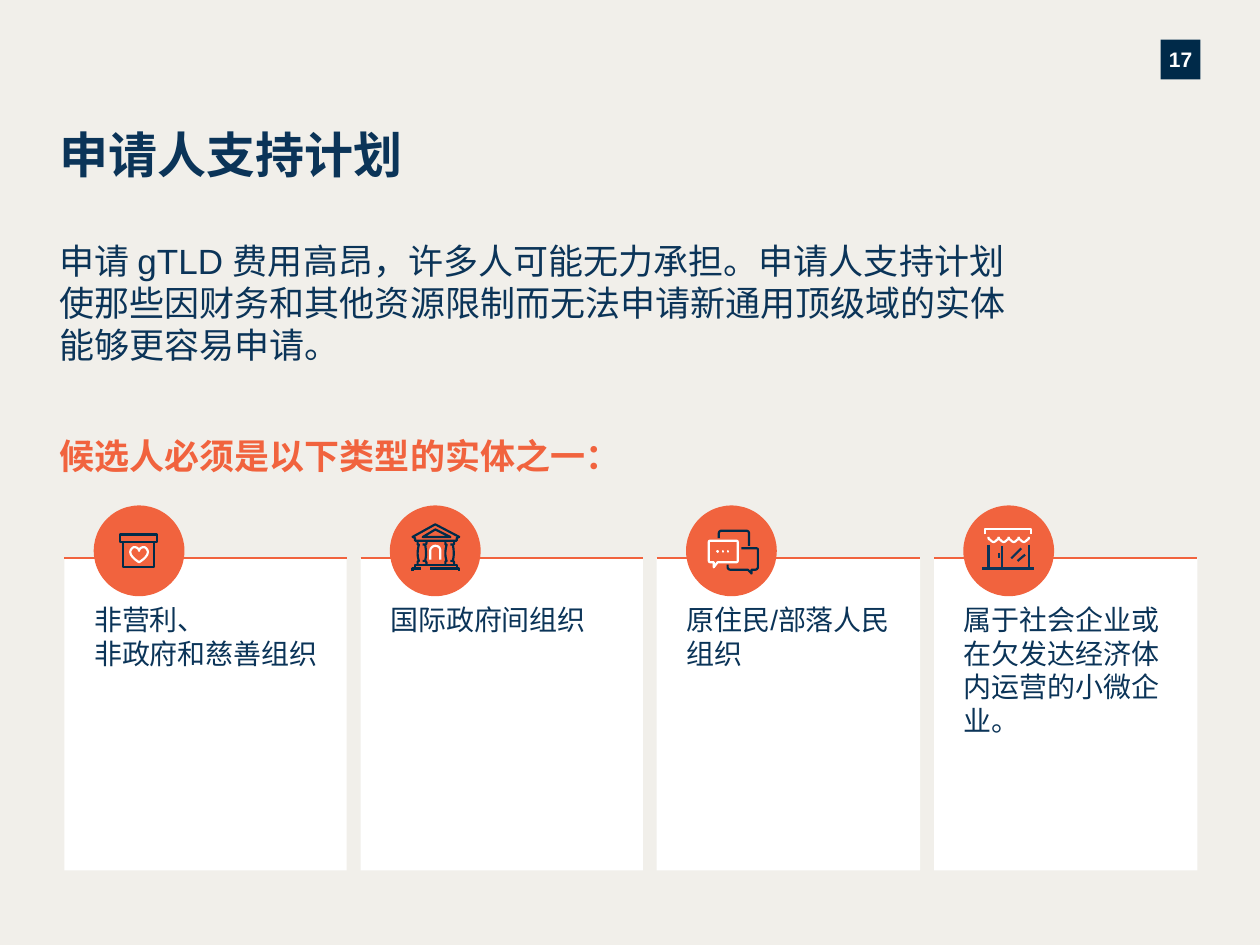
from dataclasses import dataclass

from lxml.etree import SubElement
from pptx import Presentation
from pptx.dml.color import RGBColor
from pptx.enum.shapes import MSO_CONNECTOR, MSO_SHAPE
from pptx.enum.text import MSO_ANCHOR, MSO_AUTO_SIZE, PP_ALIGN
from pptx.oxml.ns import qn
from pptx.util import Cm, Pt


@dataclass(frozen=True)
class Theme:
    font: str = "Arial"
    paper: RGBColor = RGBColor(0xF1, 0xEF, 0xEA)
    white: RGBColor = RGBColor(0xFF, 0xFF, 0xFF)
    navy: RGBColor = RGBColor(0x0B, 0x34, 0x58)
    ink: RGBColor = RGBColor(0x00, 0x2B, 0x49)
    badge: RGBColor = RGBColor(0x00, 0x2A, 0x49)
    orange: RGBColor = RGBColor(0xF1, 0x63, 0x3E)
    title: Pt = Pt(28)
    lead: Pt = Pt(20)
    card: Pt = Pt(16)
    number: Pt = Pt(12)
    stroke: Pt = Pt(1.25)


T = Theme()
CARD_TOP, CARD_HEIGHT, CARD_GAP = Cm(11.25), Cm(6.3), Cm(0.28)
MARGIN = Cm(1.3)
DISC = Cm(1.83)
DISC_TOP, DISC_INDENT = Cm(10.19), Cm(0.59)
UNIT = DISC / 72  # icons are drawn on a 72 x 72 grid over the disc

CARDS = [
    (Cm(5.69), ["非营利、", "非政府和慈善组织"]),
    (Cm(5.69), ["国际政府间组织"]),
    (Cm(5.31), ["原住民/部落人民组织"]),
    (Cm(5.31), ["属于社会企业或在欠发达经济体内运营的小微企业。"]),
]


def write(shape, paragraphs, size, color, bold=False, insets=(0, 0, 0, 0),
          align=PP_ALIGN.LEFT, anchor=MSO_ANCHOR.TOP):
    tf = shape.text_frame
    tf.word_wrap, tf.auto_size = True, MSO_AUTO_SIZE.NONE
    tf.vertical_anchor = anchor
    tf.margin_left, tf.margin_top, tf.margin_right, tf.margin_bottom = insets
    for i, text in enumerate(paragraphs):
        p = tf.add_paragraph() if i else tf.paragraphs[0]
        p.alignment = align
        r = p.add_run()
        r.text = text
        r.font.name, r.font.size, r.font.bold = T.font, size, bold
        r.font.color.rgb = color


def add_text(slide, box, text, color, bold=False):
    write(slide.shapes.add_textbox(*box), [text], T.lead, color, bold)


def add_filled(shapes, kind, box, color):
    sp = shapes.add_shape(kind, *box)
    sp.shadow.inherit = False
    sp.fill.solid()
    sp.fill.fore_color.rgb = color
    sp.line.fill.background()
    return sp


def add_line(shapes, start, end, color):
    line = shapes.add_connector(MSO_CONNECTOR.STRAIGHT, *start, *end)
    line.line.color.rgb, line.line.width = color, T.stroke
    SubElement(line._element.spPr, qn("a:effectLst"))


def flatten(path, steps=6):
    """Turn points and cubic curves (six numbers) into plain points."""
    points = []
    for item in path:
        if len(item) == 2:
            points.append(item)
            continue
        p0, p1, p2, p3 = points[-1], item[:2], item[2:4], item[4:]
        for k in range(1, steps + 1):
            t = k / steps
            weights = ((1 - t) ** 3, 3 * t * (1 - t) ** 2, 3 * t * t * (1 - t), t ** 3)
            points.append(tuple(sum(w * p[axis] for w, p in zip(weights, (p0, p1, p2, p3)))
                                for axis in (0, 1)))
    return points


def shift(path, dx):
    return [tuple(v if i % 2 else v + dx for i, v in enumerate(item)) for item in path]


def rect(x1, y1, x2, y2):
    return [(x1, y1), (x2, y1), (x2, y2), (x1, y2)]


def charity_box():
    heart = [(36, 45), (36, 45, 43, 41, 43, 37), (43, 35, 41, 33, 40, 33),
             (37, 33, 36, 35, 36, 36), (36, 35, 35, 33, 32, 33),
             (31, 33, 29, 35, 29, 37), (29, 41, 36, 45, 36, 45)]
    return [(rect(21, 23, 50, 29), T.ink, True), (rect(23, 29, 48, 49), T.ink, True),
            (heart, T.white, True)]


def bank():
    door = [(32, 43), (32, 36), (32, 34, 34, 32, 36, 32), (39, 32, 40, 34, 40, 36), (40, 43)]
    steps = [[(32, 50), (55, 50), (55, 52)], [(18, 52), (18, 50), (25, 50)],
             [(20, 50), (20, 47), (53, 47), (53, 50)]]
    column = [
        [(28, 31), (28, 31, 28.7, 35, 28.7, 38), (28.7, 41, 28, 44, 28, 44)],
        [(26, 31), (28, 31), (28, 31, 29, 31, 29, 30), (29, 28)],
        [(26, 44), (28, 44), (28, 44, 29, 45, 29, 45), (29, 47)],
        [(22, 47), (22, 45), (22, 45, 22, 44, 23, 44), (23, 44, 22, 41, 22, 38),
         (22, 35, 23, 31, 23, 31), (22, 31, 22, 31, 22, 30), (22, 28)],
    ]
    columns = [shift(path, dx) for dx in (0, 22) for path in column]
    pediment = [(36, 19), (26, 25), (48, 25)]
    roof = [(53, 28), (20, 28), (20, 26), (18, 25), (36, 15), (55, 25), (53, 26)]
    return ([(path, T.ink, False) for path in steps + columns]
            + [(door, T.white, False), (pediment, T.ink, True), (roof, T.ink, True)])


def speech():
    front = [(40, 28), (19, 28), (18, 28, 18, 29, 18, 30), (18, 43), (18, 44, 18, 45, 19, 45),
             (22, 45), (22, 49), (25, 45), (40, 45), (41, 45, 41, 44, 41, 43),
             (41, 30), (41, 29, 41, 28, 40, 28)]
    back = [(33, 47), (33, 49), (33, 50, 34, 51, 35, 51), (49, 51), (52, 54), (52, 51),
            (55, 51), (56, 51, 57, 50, 57, 49), (57, 35), (57, 34, 56, 34, 55, 34), (44, 34)]
    top = [(26, 26), (26, 22), (26, 21, 27, 20, 28, 20), (48, 20),
           (49, 20, 50, 21, 50, 22), (50, 32)]
    dots = [(rect(x, 36, x + 0.5, 36.5), T.white, True) for x in (25, 29, 33)]
    return [(front, T.white, True), (back, T.ink, False), (top, T.ink, False)] + dots


def shop():
    scallop = [(28, 25), (28, 26, 28, 27, 27, 27), (26, 28, 25, 29, 24, 29),
               (23, 29, 22, 28, 21, 27), (20, 27, 20, 26, 20, 25)]
    awning = [(17, 23), (17, 19), (54, 19), (54, 23)]
    front = [[(20, 31), (20, 50)], [(31, 32), (31, 50)], [(52, 31), (52, 50)],
             [(28, 38), (28, 42)], [(15, 50), (56, 50)],
             [(46, 34), (38, 42)], [(49, 39), (43, 44)]]
    return ([(shift(scallop, 8 * i), T.white, False) for i in range(4)]
            + [(awning, T.white, False)] + [(path, T.navy, False) for path in front])


def add_icon(slide, left, strokes):
    add_filled(slide.shapes, MSO_SHAPE.OVAL, (left, DISC_TOP, DISC, DISC), T.orange)
    shapes = slide.shapes.add_group_shape().shapes
    for path, color, closed in strokes:
        points = [(round(left + x * UNIT), round(DISC_TOP + y * UNIT)) for x, y in flatten(path)]
        if len(points) == 2:
            add_line(shapes, *points, color)
            continue
        builder = shapes.build_freeform(*points[0], scale=1.0)
        builder.add_line_segments(points[1:], close=closed)
        sp = builder.convert_to_shape()
        sp.shadow.inherit = False
        sp.fill.background()
        sp.line.color.rgb, sp.line.width = color, T.stroke


def add_card(slide, left, width, paragraphs, strokes):
    card = add_filled(slide.shapes, MSO_SHAPE.RECTANGLE,
                      (left, CARD_TOP, width, CARD_HEIGHT), T.white)
    write(card, paragraphs, T.card, T.navy, insets=(Cm(0.6), Cm(0.9), Cm(0.4), Cm(0.5)))
    add_line(slide.shapes, (left, CARD_TOP), (left + width, CARD_TOP), T.orange)
    add_icon(slide, left + DISC_INDENT, strokes)


def main():
    prs = Presentation()
    prs.slide_width, prs.slide_height = Cm(25.4), Cm(19.05)
    slide = prs.slides.add_slide(prs.slide_layouts[5])
    slide.background.fill.solid()
    slide.background.fill.fore_color.rgb = T.paper

    number = add_filled(slide.shapes, MSO_SHAPE.RECTANGLE,
                        (Cm(23.4), Cm(0.8), Cm(0.8), Cm(0.8)), T.badge)
    write(number, ["17"], T.number, T.white, True,
          align=PP_ALIGN.CENTER, anchor=MSO_ANCHOR.MIDDLE)

    title = slide.shapes.title
    title.left, title.top, title.width, title.height = Cm(1.2), Cm(2.5), Cm(13.97), Cm(1.4)
    write(title, ["申请人支持计划"], T.title, T.navy, True)
    add_text(slide, (Cm(1.2), Cm(4.83), Cm(19.58), Cm(3.78)),
             "申请 gTLD 费用高昂，许多人可能无力承担。申请人支持计划使那些因财务和其他资源限制"
             "而无法申请新通用顶级域的实体能够更容易申请。", T.navy)
    add_text(slide, (Cm(1.2), Cm(8.76), Cm(19.74), Cm(1.09)),
             "候选人必须是以下类型的实体之一：", T.orange, bold=True)

    left = MARGIN
    for (width, paragraphs), icon in zip(CARDS, (charity_box, bank, speech, shop)):
        add_card(slide, left, width, paragraphs, icon())
        left += width + CARD_GAP
    prs.save("out.pptx")


if __name__ == "__main__":
    main()
